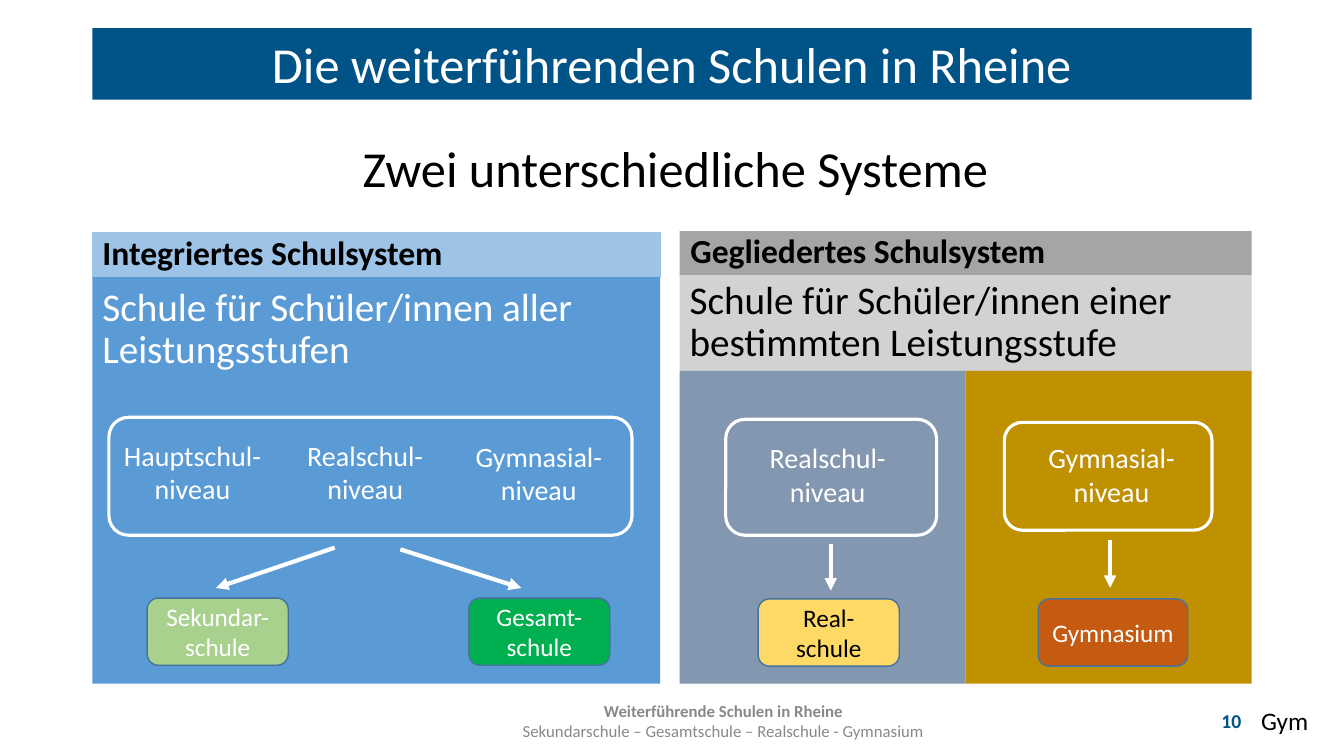
from lxml import etree
from pptx import Presentation
from pptx import util as u
from pptx.dml.color import RGBColor
from pptx.enum import shapes, text
from pptx.oxml.ns import qn

WIDTH, HEIGHT = u.Inches(13.33), u.Inches(7.5)
COL, ROW = WIDTH / 80, HEIGHT / 45

FONT = "Calibri"
WHITE = RGBColor(0xFF, 0xFF, 0xFF)
BLACK = RGBColor(0x00, 0x00, 0x00)
NAVY = RGBColor(0x00, 0x53, 0x86)
BLUE = RGBColor(0x5B, 0x9B, 0xD5)
LIGHT_BLUE = RGBColor(0x9D, 0xC3, 0xE6)
OUTLINE = RGBColor(0x43, 0x73, 0x9E)
GREY = RGBColor(0xA5, 0xA5, 0xA5)
LIGHT_GREY = RGBColor(0xD2, 0xD2, 0xD2)
FOOTER_GREY = RGBColor(0x89, 0x89, 0x89)
SLATE = RGBColor(0x84, 0x97, 0xB0)
OCHRE = RGBColor(0xBF, 0x90, 0x00)
LIGHT_GREEN = RGBColor(0xA9, 0xD1, 0x8E)
GREEN = RGBColor(0x00, 0xB0, 0x50)
YELLOW = RGBColor(0xFF, 0xD9, 0x66)
RUST = RGBColor(0xC5, 0x5A, 0x11)

RECT = shapes.MSO_SHAPE.RECTANGLE
ROUND = shapes.MSO_SHAPE.ROUNDED_RECTANGLE
LEFT, CENTER, RIGHT = (text.PP_ALIGN.LEFT, text.PP_ALIGN.CENTER,
                       text.PP_ALIGN.RIGHT)
TOP, MIDDLE, BOTTOM = (text.MSO_ANCHOR.TOP, text.MSO_ANCHOR.MIDDLE,
                       text.MSO_ANCHOR.BOTTOM)

MARGIN, CONTENT = 5.5, 69
LEFT_WIDTH = 33.8
RIGHT_X, RIGHT_WIDTH = 40.45, 34.05
HALF = RIGHT_WIDTH / 2
FLOOR = 40.7


def grid(x, y, w, h):
    return [round(v) for v in (x * COL, y * ROW, w * COL, h * ROW)]


def write(sp, words, size, color, align=LEFT, anchor=TOP, bold=False,
          spacing=1.0, wrap=True):
    tf = sp.text_frame
    tf.word_wrap = wrap
    tf.auto_size = text.MSO_AUTO_SIZE.NONE
    tf.vertical_anchor = anchor
    p = tf.paragraphs[0]
    p.text = words
    p.alignment = align
    p.line_spacing = spacing
    p.font.name = FONT
    p.font.size = u.Pt(size)
    p.font.bold = bold
    p.font.color.rgb = color
    return p


def add_box(s, kind, box, fill=None, line=None, weight=1):
    sp = s.shapes.add_shape(kind, *grid(*box))
    sp.shadow.inherit = False
    if fill is None:
        sp.fill.background()
    else:
        sp.fill.solid()
        sp.fill.fore_color.rgb = fill
    if line is None:
        sp.line.fill.background()
    else:
        sp.line.color.rgb = line
        sp.line.width = u.Pt(weight)
    return sp


def add_label(s, box, words, size, color, **style):
    return write(s.shapes.add_textbox(*grid(*box)), words, size, color, **style)


def add_arrow(s, x1, y1, x2, y2):
    start, end = grid(x1, y1, x2, y2)[:2], grid(x1, y1, x2, y2)[2:]
    sp = s.shapes.add_connector(shapes.MSO_CONNECTOR.STRAIGHT, *start, *end)
    sp.line.color.rgb = WHITE
    sp.line.width = u.Pt(3)
    etree.SubElement(sp.line._get_or_add_ln(), qn("a:tailEnd"), type="triangle")
    etree.SubElement(sp._element.spPr, qn("a:effectLst"))


def add_heading(s, x, bottom, width, words):
    add_label(s, (x, bottom - 5.4, width, 5.4), words, 24, BLACK,
              anchor=BOTTOM, bold=True, spacing=0.9)


def add_level(s, x, y, width, words):
    add_label(s, (x, y, width, 4.63), words, 20, WHITE, align=CENTER)


def add_frame(s, *box):
    add_box(s, ROUND, box, line=WHITE, weight=2.25)


def add_school(s, x, y, width, words, fill, color=WHITE):
    sp = add_box(s, ROUND, (x, y, width, 4), fill, OUTLINE)
    write(sp, words, 18, color, align=CENTER, anchor=MIDDLE)


def add_title(s):
    sp = s.shapes.title
    sp.left, sp.top, sp.width, sp.height = grid(MARGIN, 1.68, CONTENT, 4.26)
    sp.fill.solid()
    sp.fill.fore_color.rgb = NAVY
    write(sp, "Die weiterführenden Schulen in Rheine", 36, WHITE,
          align=CENTER, anchor=BOTTOM, spacing=0.9)


def add_integrated_system(s):
    add_box(s, RECT, (MARGIN, 13.87, LEFT_WIDTH, 2.63), LIGHT_BLUE, LIGHT_BLUE)
    add_box(s, RECT, (MARGIN, 16.5, LEFT_WIDTH, FLOOR - 16.5), BLUE)
    add_heading(s, MARGIN, 16.55, LEFT_WIDTH, "Integriertes Schulsystem")
    add_label(s, (MARGIN, 16.8, LEFT_WIDTH, 5.7),
              "Schule für Schüler/innen aller Leistungsstufen", 28, WHITE,
              spacing=0.9)
    add_level(s, 6.42, 25.8, 10.08, "Hauptschul-niveau")
    add_level(s, 16.7, 25.8, 10.08, "Realschul-\nniveau")
    add_level(s, 26.1, 25.86, 11.95, "Gymnasial-niveau")
    add_frame(s, 6.48, 24.84, 31.14, 7.02)
    add_arrow(s, 19.93, 32.6, 12.85, 35)
    add_arrow(s, 23.83, 32.7, 31.03, 35)
    add_school(s, 8.76, 35.6, 8.4, "Sekundar-schule", LIGHT_GREEN)
    add_school(s, 27.9, 35.6, 8.4, "Gesamt-schule", GREEN)


def add_tiered_system(s):
    add_box(s, RECT, (RIGHT_X, 13.75, RIGHT_WIDTH, 2.63), GREY)
    sp = add_box(s, RECT, (RIGHT_X, 16.38, RIGHT_WIDTH, 5.7), LIGHT_GREY)
    write(sp, "Schule für Schüler/innen einer bestimmten Leistungsstufe",
          28, BLACK, spacing=0.9)
    for i, fill in enumerate((SLATE, OCHRE)):
        add_box(s, RECT, (RIGHT_X + i * HALF, 22.08, HALF, FLOOR - 22.08), fill)
    add_heading(s, RIGHT_X + 0.05, 16.44, RIGHT_WIDTH, "Gegliedertes Schulsystem")
    add_level(s, 44.23, 25.92, 10.08, "Realschul-\nniveau")
    add_level(s, 60.25, 25.92, 11.82, "Gymnasial-niveau")
    add_frame(s, 43.2, 24.96, 12.55, 6.9)
    add_frame(s, 59.78, 25.14, 12.36, 6.42)
    add_arrow(s, 49.45, 32.4, 49.45, 35.16)
    add_arrow(s, 66.08, 32.16, 66.08, 35)
    add_school(s, 45.13, 35.65, 8.4, "Real-schule", YELLOW, BLACK)
    add_school(s, 61.8, 35.65, 8.9, "Gymnasium", RUST)


def add_footer(s):
    p = add_label(s, (26.53, 41.7, 33.07, 2.4), "Weiterführende Schulen in Rheine\n",
                  12, FOOTER_GREY, align=CENTER, anchor=MIDDLE)
    p.runs[0].font.bold = True
    p.add_run().text = "Sekundarschule – Gesamtschule – Realschule - Gymnasium"
    add_label(s, (71.72, 41.7, 2.76, 2.4), "10", 14, NAVY,
              align=RIGHT, anchor=MIDDLE, bold=True)
    add_label(s, (74.48, 41.7, 5.04, 2.4), "Gym", 18, BLACK)


def main():
    prs = Presentation()
    prs.slide_width, prs.slide_height = WIDTH, HEIGHT
    s = prs.slides.add_slide(prs.slide_layouts[5])
    add_title(s)
    add_label(s, (20.83, 7.86, 38.77, 4.26), "Zwei unterschiedliche Systeme",
              36, BLACK, align=CENTER, wrap=False)
    add_integrated_system(s)
    add_tiered_system(s)
    add_footer(s)
    prs.save("out.pptx")


if __name__ == "__main__":
    main()
